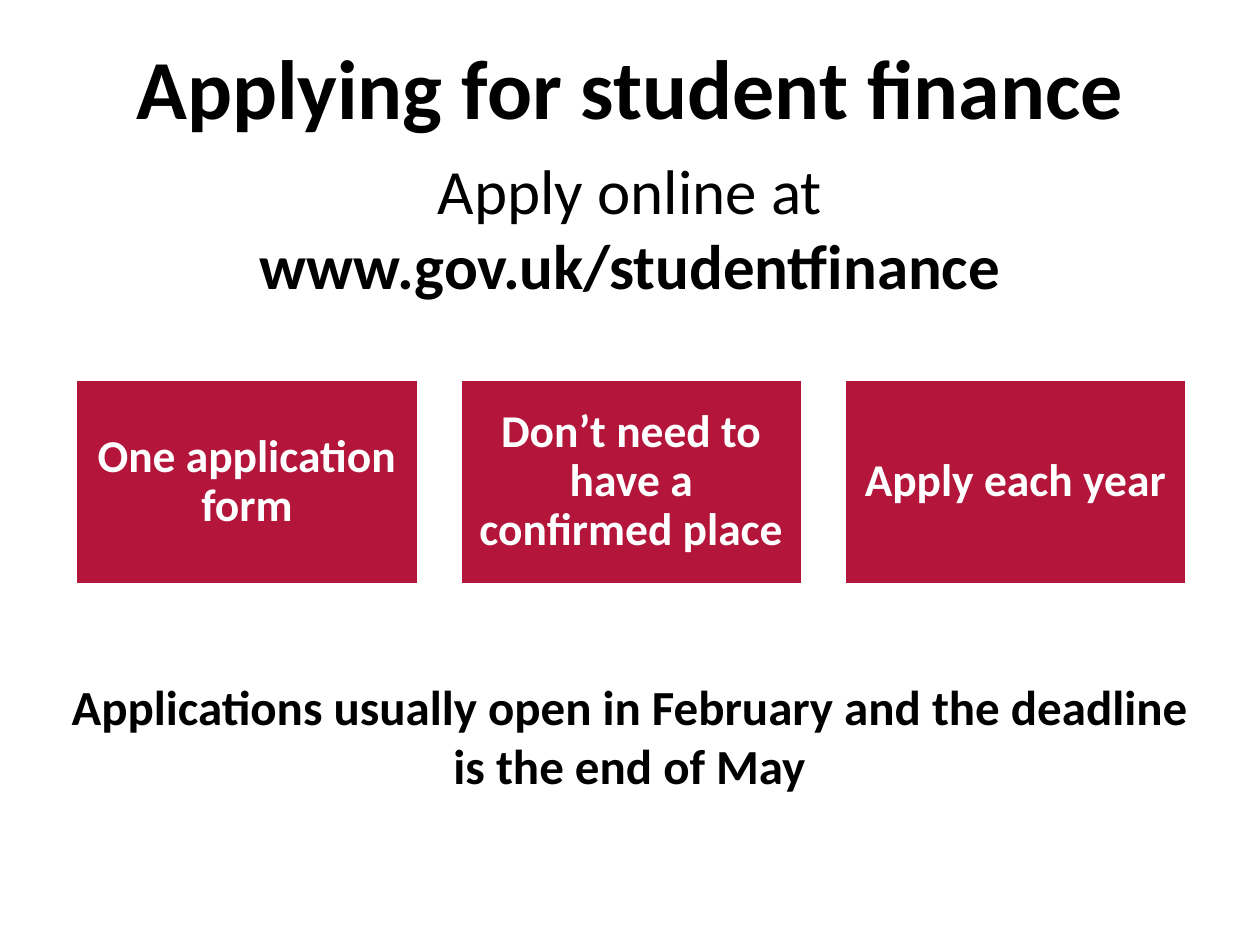
from dataclasses import dataclass

from pptx import Presentation
from pptx.dml.color import RGBColor
from pptx.enum.shapes import MSO_SHAPE as Shape
from pptx.enum.text import MSO_ANCHOR as Anchor, PP_ALIGN as Align
from pptx.util import Inches, Pt


@dataclass(frozen=True)
class Theme:
    """Colours, font and type sizes of the slide."""
    font: str = "Calibri"
    ink: RGBColor = RGBColor(0x00, 0x00, 0x00)
    paper: RGBColor = RGBColor(0xFF, 0xFF, 0xFF)
    accent: RGBColor = RGBColor(0xB4, 0x15, 0x3A)
    title: int = 48
    lead: int = 36
    note: int = 28
    card: int = 26


THEME = Theme()
CARDS = ["One application form", "Don’t need to have a confirmed place", "Apply each year"]
CARD_LEFT, CARD_TOP, CARD_W, CARD_H, CARD_GAP = 0.6, 3.01, 2.72, 1.63, 0.33


def add_paragraph(p, text, size, color, bold=True):
    """Fill a centred paragraph with one run."""
    p.alignment = Align.CENTER
    r = p.add_run()
    r.text = text
    r.font.name = THEME.font
    r.font.size = Pt(size)
    r.font.bold = bold
    r.font.color.rgb = color


def add_text(s, box, lines, size, anchor=Anchor.TOP):
    """Add a wrapping text box with one paragraph per (text, bold) line."""
    tf = s.shapes.add_textbox(*map(Inches, box)).text_frame
    tf.word_wrap = True
    tf.vertical_anchor = anchor
    for i, (text, bold) in enumerate(lines):
        p = tf.add_paragraph() if i else tf.paragraphs[0]
        add_paragraph(p, text, size, THEME.ink, bold)


def add_card(s, left, text):
    """Add one filled card with centred text."""
    box = (left, CARD_TOP, CARD_W, CARD_H)
    sp = s.shapes.add_shape(Shape.RECTANGLE, *map(Inches, box))
    sp.shadow.inherit = False
    sp.fill.solid()
    sp.fill.fore_color.rgb = THEME.accent
    sp.line.color.rgb = THEME.paper
    sp.line.width = Pt(2)
    tf = sp.text_frame
    tf.word_wrap = True
    tf.vertical_anchor = Anchor.MIDDLE
    tf.margin_left = tf.margin_right = tf.margin_top = tf.margin_bottom = Inches(0.11)
    p = tf.paragraphs[0]
    p.line_spacing = 0.9
    add_paragraph(p, text, THEME.card, THEME.paper)


def main():
    """Build the student finance slide."""
    prs = Presentation()
    prs.slide_width, prs.slide_height = Inches(10), Inches(7.5)
    s = prs.slides.add_slide(prs.slide_layouts[6])
    add_text(s, (0.12, 0.29, 9.76, 0.79), [("Applying for student finance", True)],
             THEME.title, Anchor.MIDDLE)
    add_text(s, (0.59, 1.15, 8.82, 1.72),
             [("Apply online at", False), ("www.gov.uk/studentfinance", True)], THEME.lead)
    add_text(s, (0.31, 5.32, 9.37, 1.04),
             [("Applications usually open in February and the deadline is the end of May", True)],
             THEME.note)
    for i, text in enumerate(CARDS):
        add_card(s, CARD_LEFT + i * (CARD_W + CARD_GAP), text)
    prs.save("out.pptx")


if __name__ == "__main__":
    main()
